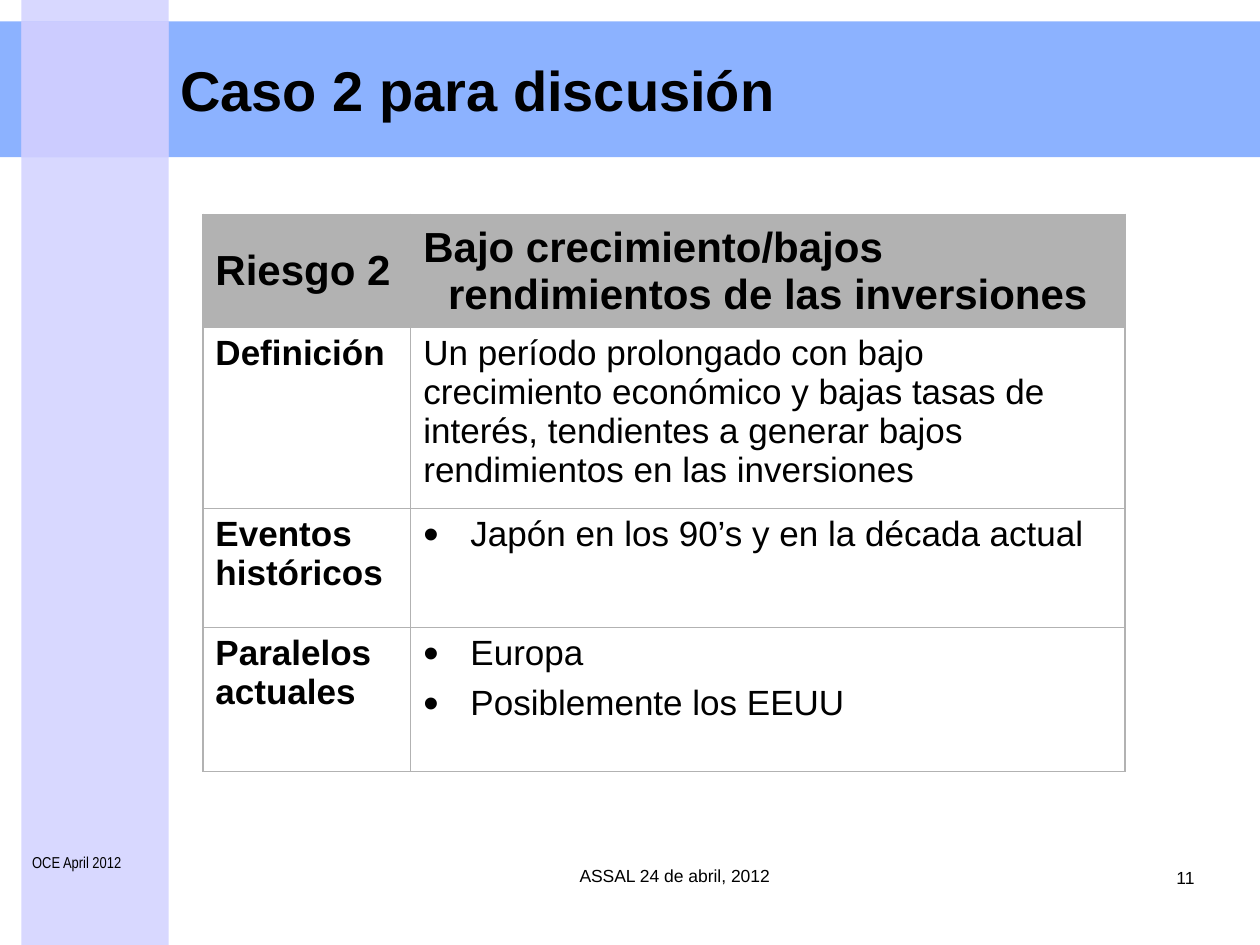
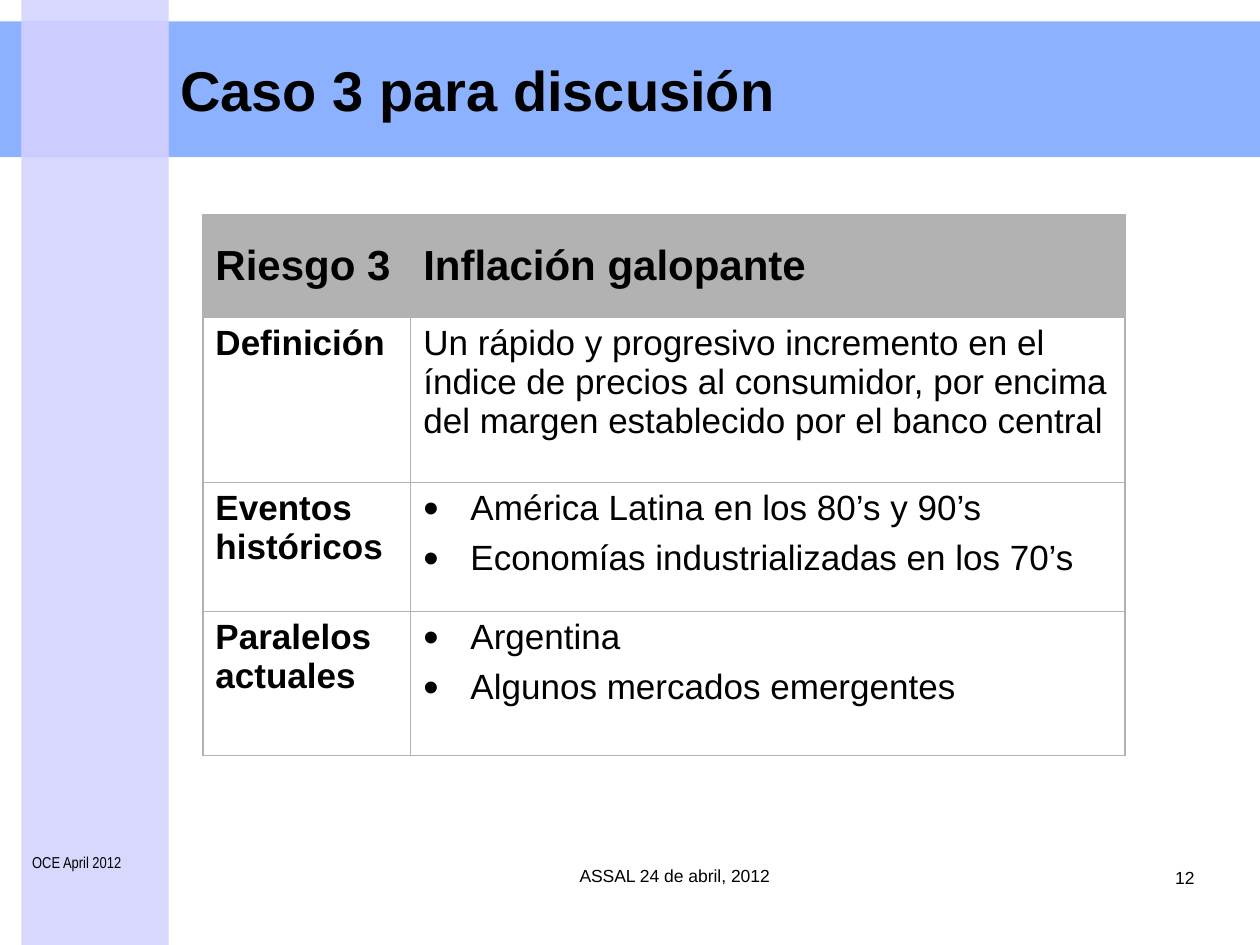
from lxml import etree
from pptx import Presentation
from pptx import util as u
from pptx.dml.color import RGBColor
from pptx.enum import shapes, text
from pptx.oxml import ns

Cm, Pt = u.Cm, u.Pt
BLACK = RGBColor(0x00, 0x00, 0x00)
BLUE = RGBColor(0x66, 0x99, 0xFF)
LAVENDER = RGBColor(0xCC, 0xCC, 0xFF)
GREY = RGBColor(0xB2, 0xB2, 0xB2)
LEFT, CENTER, RIGHT = text.PP_ALIGN.LEFT, text.PP_ALIGN.CENTER, text.PP_ALIGN.RIGHT
MIDDLE, TOP = text.MSO_ANCHOR.MIDDLE, text.MSO_ANCHOR.TOP

BAND_TOP, BAND_HEIGHT = 0.43, 2.74
STRIPE_LEFT, STRIPE_WIDTH = 0.43, 2.97
BANDS = [  # left, top, width, height, colour, opacity in percent
    (0, BAND_TOP, 25.4, BAND_HEIGHT, BLUE, 75),
    (STRIPE_LEFT, 0, STRIPE_WIDTH, 19.05, LAVENDER, 75),
    (STRIPE_LEFT, BAND_TOP, STRIPE_WIDTH, BAND_HEIGHT, LAVENDER, 100),
]
COLUMNS = [4.19, 14.4]
ROW_LABELS = ["Definición", "Eventos históricos", "Paralelos actuales"]

CASES = [
    {
        "case": 2, "page": 11, "rows": [2.13, 3.4, 2.4, 2.9],
        "risk": "Bajo crecimiento/bajos rendimientos de las inversiones",
        "details": [
            ["Un período prolongado con bajo crecimiento económico y bajas tasas de "
             "interés, tendientes a generar bajos rendimientos en las inversiones"],
            ["Japón en los 90’s y en la década actual"],
            ["Europa", "Posiblemente los EEUU"],
        ],
    },
    {
        "case": 3, "page": 12, "rows": [2.08, 3.33, 2.6, 2.9],
        "risk": "Inflación galopante",
        "details": [
            ["Un rápido y progresivo incremento en el índice de precios al consumidor, "
             "por encima del margen establecido por el banco central"],
            ["América Latina en los 80’s y 90’s", "Economías industrializadas en los 70’s"],
            ["Argentina", "Algunos mercados emergentes"],
        ],
    },
]


def set_fill(fill, color, opacity):
    fill.solid()
    fill.fore_color.rgb = color
    if opacity < 100:
        clr = fill._xPr.find(".//" + ns.qn("a:srgbClr"))
        etree.SubElement(clr, ns.qn("a:alpha"), val=str(opacity * 1000))


def write(tf, lines, size, bold=False, align=LEFT, font="Arial"):
    tf.text = "\n".join(lines)
    for p in tf.paragraphs:
        p.alignment = align
        for r in p.runs:
            r.font.name, r.font.size, r.font.bold = font, Pt(size), bold
            r.font.color.rgb = BLACK


prs = Presentation()
prs.slide_width, prs.slide_height = Cm(25.4), Cm(19.05)

for case in CASES:
    s = prs.slides.add_slide(prs.slide_layouts[5])

    # Bands, placed behind the title
    for *box, color, opacity in BANDS:
        band = s.shapes.add_shape(shapes.MSO_SHAPE.RECTANGLE, *map(Cm, box))
        band.shadow.inherit = False
        band.line.fill.background()
        set_fill(band.fill, color, opacity)

    title = s.shapes.title
    title.left, title.top, title.width, title.height = map(Cm, (3.38, BAND_TOP, 21.6, BAND_HEIGHT))
    s.shapes._spTree.append(title._element)
    tf = title.text_frame
    tf.auto_size, tf.vertical_anchor = text.MSO_AUTO_SIZE.NONE, MIDDLE
    write(tf, [f"Caso {case['case']} para discusión"], 32, bold=True)

    # Footers
    for box, words, size, align, font in [
        ((4.5, 17.32, 18.2, 1.27), "ASSAL 24 de abril, 2012", 10, CENTER, "Arial"),
        ((22.86, 17.35, 1.47, 1.27), str(case["page"]), 10, RIGHT, "Arial"),
        ((0.4, 17.07, 2.6, 1.07), "OCE April 2012", 9, LEFT, "Arial Narrow"),
    ]:
        tf = s.shapes.add_textbox(*map(Cm, box)).text_frame
        tf.word_wrap = True
        write(tf, [words], size, align=align, font=font)

    # Risk table
    rows = case["rows"]
    table = s.shapes.add_table(len(rows), len(COLUMNS), Cm(4.09), Cm(4.32),
                               Cm(sum(COLUMNS)), Cm(sum(rows))).table
    table.first_row = table.horz_banding = False
    for column, width in zip(table.columns, COLUMNS):
        column.width = Cm(width)
    for row, height in zip(table.rows, rows):
        row.height = Cm(height)

    labels = [f"Riesgo {case['case']}"] + ROW_LABELS
    details = [[case["risk"]]] + case["details"]
    for i, (label, detail) in enumerate(zip(labels, details)):
        header = i == 0
        for j, lines in enumerate([[label], detail]):
            cell = table.cell(i, j)
            tcPr = cell._tc.get_or_add_tcPr()
            for side in "LRTB":
                ln = etree.SubElement(tcPr, ns.qn(f"a:ln{side}"), w=str(Pt(1)))
                fill = etree.SubElement(ln, ns.qn("a:solidFill"))
                etree.SubElement(fill, ns.qn("a:srgbClr"), val=str(GREY))
            if header:
                set_fill(cell.fill, GREY, 50)
            else:
                cell.fill.background()
            cell.vertical_anchor = MIDDLE if header else TOP
            write(cell.text_frame, lines, 24 if header else 20, bold=header or j == 0)

        # Hanging indent in the header, bullets below the definition
        for p in table.cell(i, 1).text_frame.paragraphs:
            pPr = p._p.get_or_add_pPr()
            if header:
                indent = Cm(0.5)
            elif i >= 2:
                indent = Cm(0.95)
                etree.SubElement(pPr, ns.qn("a:buSzPct"), val="125000")
                etree.SubElement(pPr, ns.qn("a:buFont"), typeface="Arial")
                etree.SubElement(pPr, ns.qn("a:buChar"), char="•")
                p.space_after = Pt(6)
            else:
                continue
            pPr.set("marL", str(indent))
            pPr.set("indent", str(-indent))

prs.save("out.pptx")
